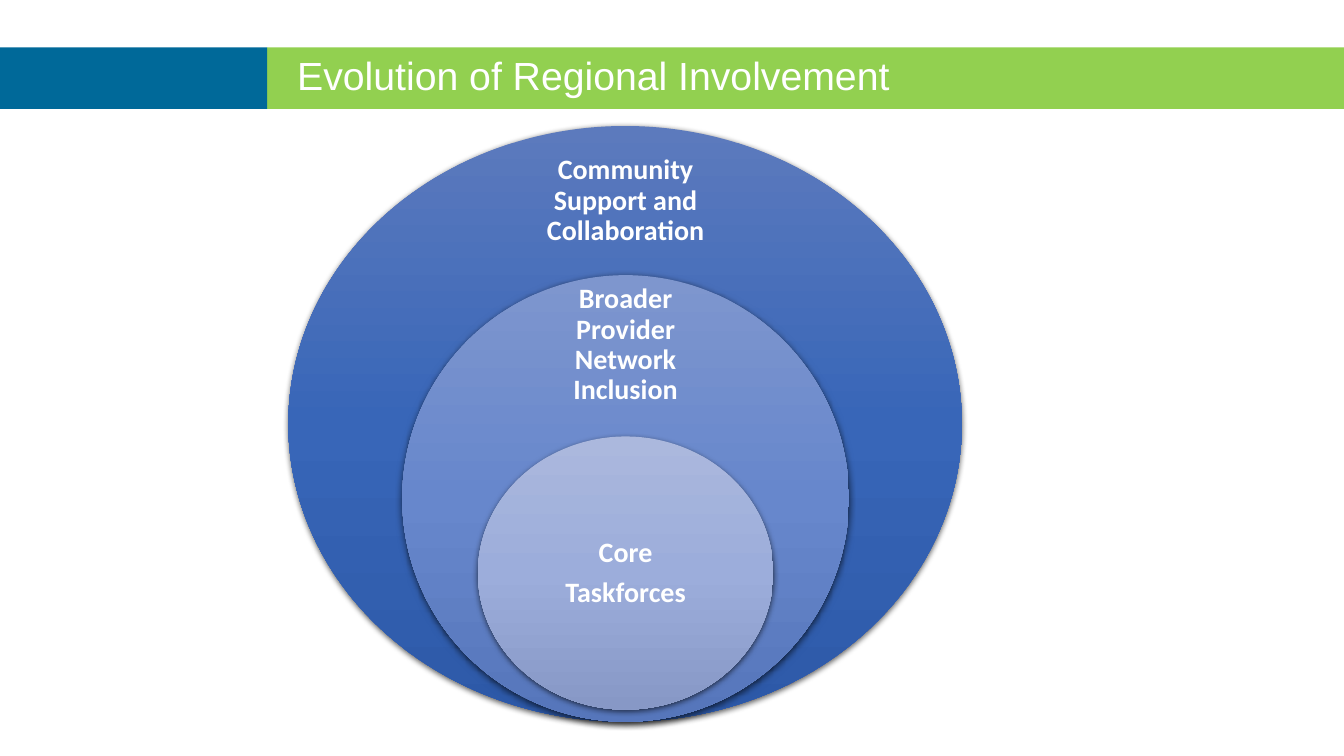
"""Build the slide of nested circles showing how regional involvement evolves."""
from copy import deepcopy
from dataclasses import dataclass

from lxml.etree import SubElement
from pptx import Presentation
from pptx.dml.color import RGBColor
from pptx.enum.shapes import MSO_SHAPE as Preset
from pptx.enum.text import MSO_ANCHOR as Anchor, PP_ALIGN as Align
from pptx.oxml.ns import qn
from pptx.shapes.autoshape import Shape
from pptx.slide import Slide
from pptx.util import Emu, Pt

PX = 9144
COLORS = {"green": "92D050", "blue": "006999", "white": "FFFFFF", "black": "000000"}


@dataclass(frozen=True)
class Area:
    left: int
    top: int
    width: int
    height: int

    def emu(self) -> tuple[Emu, ...]:
        return tuple(Emu(n * PX) for n in (self.left, self.top, self.width, self.height))


@dataclass(frozen=True)
class Band:
    area: Area
    color: str


@dataclass(frozen=True)
class Label:
    area: Area
    lines: tuple[str, ...]
    font: str = "Calibri"
    size: int = 20
    bold: bool = True
    align: Align = Align.CENTER
    anchor: Anchor = Anchor.MIDDLE
    insets: tuple[int, int] = (16, 16)
    space_after: int = 7


@dataclass(frozen=True)
class Ring:
    area: Area
    gradient: tuple[str, str, str]
    label: Label


BANDS = (
    Band(Area(265, 47, 1069, 61), "green"),
    Band(Area(0, 47, 265, 61), "blue"),
)
TITLE = Label(Area(285, 51, 1014, 64), ("Evolution of Regional Involvement",),
              font="Arial", size=28, bold=False, align=Align.LEFT,
              anchor=Anchor.TOP, insets=(10, 5), space_after=0)
RINGS = (
    Ring(Area(286, 125, 668, 591), ("5C7ABD", "3866B8", "2D59A8"),
         Label(Area(504, 155, 233, 89), ("Community Support and Collaboration",))),
    Ring(Area(399, 273, 443, 443), ("7E96CE", "6787CC", "5676BB"),
         Label(Area(517, 301, 207, 83), ("Broader Provider Network Inclusion",))),
    Ring(Area(474, 433, 293, 271), ("ABB8DD", "9CADDB", "8798C6"),
         Label(Area(517, 501, 207, 136), ("Core", "Taskforces"))),
)


def rgb(name: str) -> RGBColor:
    return RGBColor.from_string(COLORS[name])


def add_plain_shape(page: Slide, preset: Preset, area: Area) -> Shape:
    shape = page.shapes.add_shape(preset, *area.emu())
    shape.line.fill.background()
    shape.shadow.inherit = False
    return shape


def add_band(page: Slide, band: Band) -> None:
    shape = add_plain_shape(page, Preset.RECTANGLE, band.area)
    shape.fill.solid()
    shape.fill.fore_color.rgb = rgb(band.color)


def add_shadow(shape: Shape) -> None:
    effects = shape.element.spPr.find(qn("a:effectLst"))
    shadow = SubElement(effects, qn("a:outerShdw"), blurRad=str(Pt(4.5)),
                        dist=str(Pt(1.5)), dir="5400000", rotWithShape="0")
    color = SubElement(shadow, qn("a:srgbClr"), val=COLORS["black"])
    SubElement(color, qn("a:alpha"), val="63000")


def add_label(page: Slide, label: Label) -> None:
    frame = page.shapes.add_textbox(*label.area.emu()).text_frame
    frame.word_wrap = True
    frame.vertical_anchor = label.anchor
    side, edge = (Emu(n * PX) for n in label.insets)
    frame.margin_left = frame.margin_right = side
    frame.margin_top = frame.margin_bottom = edge
    for index, line in enumerate(label.lines):
        para = frame.add_paragraph() if index else frame.paragraphs[0]
        para.alignment = label.align
        para.line_spacing = 0.9
        para.space_after = Pt(label.space_after)
        span = para.add_run()
        span.text = line
        span.font.name = label.font
        span.font.size = Pt(label.size)
        span.font.bold = label.bold
        span.font.color.rgb = rgb("white")


def add_ring(page: Slide, ring: Ring) -> None:
    shape = add_plain_shape(page, Preset.OVAL, ring.area)
    shape.fill.gradient()
    shape.fill.gradient_angle = 270
    stop_list = shape.element.spPr.find(".//" + qn("a:gsLst"))
    stop_list.insert(1, deepcopy(stop_list[0]))
    for index, (stop, color) in enumerate(zip(shape.fill.gradient_stops, ring.gradient)):
        stop.position = index / 2
        stop.color.rgb = RGBColor.from_string(color)
    add_shadow(shape)
    add_label(page, ring.label)


def main() -> None:
    deck = Presentation()
    deck.slide_width, deck.slide_height = Emu(1333 * PX), Emu(750 * PX)
    page = deck.slides.add_slide(deck.slide_layouts[6])
    for band in BANDS:
        add_band(page, band)
    add_label(page, TITLE)
    for ring in RINGS:
        add_ring(page, ring)
    deck.save("out.pptx")


if __name__ == "__main__":
    main()
